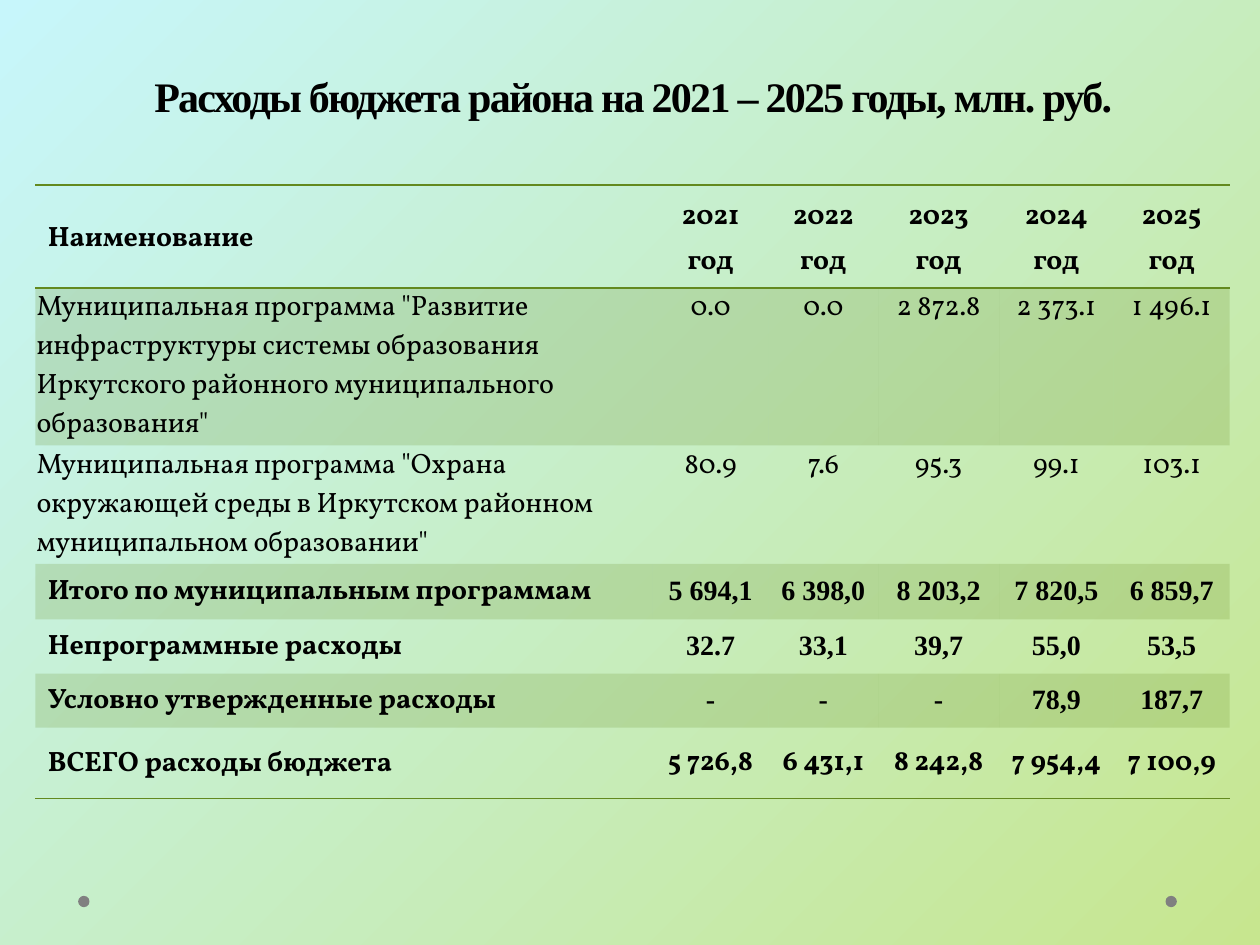
from dataclasses import dataclass
from lxml.etree import SubElement
from pptx import Presentation
from pptx.dml.color import RGBColor
from pptx.enum.shapes import MSO_SHAPE
from pptx.enum.text import MSO_ANCHOR, PP_ALIGN
from pptx.oxml import parse_xml
from pptx.oxml.ns import nsdecls, qn
from pptx.util import Inches, Pt


@dataclass(frozen=True)
class Theme:
    gradient: tuple = ("C7F6FB", "C7E68F")
    accent: str = "63891F"
    text: str = "000000"
    dot: str = "808080"
    serif: str = "Times New Roman"
    body: str = "Vollkorn"
    title_size: int = 24
    table_size: int = 16


theme = Theme()


def add_text(paragraph, text, font_name, size, bold):
    run = paragraph.add_run()
    run.text = text
    run.font.name = font_name
    run.font.size = Pt(size)
    run.font.bold = bold
    run.font.color.rgb = RGBColor.from_string(theme.text)
    return run


def add_border(cell, side, position):
    cell._tc.get_or_add_tcPr().insert(position, parse_xml(
        f'<a:{side} {nsdecls("a")} w="12700"><a:solidFill>'
        f'<a:srgbClr val="{theme.accent}"/></a:solidFill></a:{side}>'))


presentation = Presentation()
presentation.slide_width = Inches(10)
presentation.slide_height = Inches(7.5)
slide = presentation.slides.add_slide(presentation.slide_layouts[5])

background = slide.background.fill
background.gradient()
background.gradient_angle = 315
for stop, color in zip(background.gradient_stops, theme.gradient):
    stop.color.rgb = RGBColor.from_string(color)

for left in (9.25, 0.62):
    dot = slide.shapes.add_shape(
        MSO_SHAPE.OVAL, Inches(left), Inches(7.11), Inches(0.09), Inches(0.09))
    dot.shadow.inherit = False
    dot.fill.solid()
    dot.fill.fore_color.rgb = RGBColor.from_string(theme.dot)
    dot.line.fill.background()

title = slide.shapes.title
title.left, title.top = Inches(0.28), Inches(0.49)
title.width, title.height = Inches(9.49), Inches(0.52)
title.text_frame.vertical_anchor = MSO_ANCHOR.BOTTOM
title_paragraph = title.text_frame.paragraphs[0]
title_paragraph.alignment = PP_ALIGN.CENTER
title_run = add_text(
    title_paragraph, "Расходы бюджета района на 2021 – 2025 годы, млн. руб.",
    theme.serif, theme.title_size, True)
title_run.font._element.set("spc", "-100")

rows = [
    ("Наименование", "2021 год", "2022 год", "2023 год", "2024 год", "2025 год"),
    ('Муниципальная программа "Развитие инфраструктуры системы образования '
     'Иркутского районного муниципального образования"',
     "0.0", "0.0", "2 872.8", "2 373.1", "1 496.1"),
    ('Муниципальная программа "Охрана окружающей среды в Иркутском районном '
     'муниципальном образовании"', "80.9", "7.6", "95.3", "99.1", "103.1"),
    ("Итого по муниципальным программам",
     "5 694,1", "6 398,0", "8 203,2", "7 820,5", "6 859,7"),
    ("Непрограммные расходы", "32.7", "33,1", "39,7", "55,0", "53,5"),
    ("Условно утвержденные расходы", "-", "-", "-", "78,9", "187,7"),
    ("ВСЕГО расходы бюджета",
     "5 726,8", "6 431,1", "8 242,8", "7 954,4", "7 100,9"),
]
column_widths = (4.9, 0.92, 0.87, 0.96, 0.91, 0.92)
row_heights = (0.72, 0.81, 0.81, 0.44, 0.43, 0.43, 0.56)
header_row, total_row = 0, len(rows) - 1
program_rows, summary_rows = (1, 2), (3, 4, 5)

table = slide.shapes.add_table(
    len(rows), len(column_widths), Inches(0.28), Inches(1.47),
    Inches(sum(column_widths)), Inches(sum(row_heights))).table
table.first_row = False
table.horz_banding = False
table._tbl.tblPr.find(qn("a:tableStyleId")).text = "{2D5ABB26-0587-4C30-8999-92F81FD0307C}"
for column, width in zip(table.columns, column_widths):
    column.width = Inches(width)
for row, height in zip(table.rows, row_heights):
    row.height = Inches(height)

for row_index, values in enumerate(rows):
    for column_index, value in enumerate(values):
        cell = table.cell(row_index, column_index)
        is_number = column_index > 0
        is_program = row_index in program_rows
        is_summary_number = is_number and row_index in summary_rows
        is_total_number = is_number and row_index == total_row

        cell.vertical_anchor = MSO_ANCHOR.TOP if is_program else MSO_ANCHOR.MIDDLE
        if is_program or is_total_number:
            cell.margin_left = cell.margin_right = cell.margin_top = Inches(0.01)
            cell.margin_bottom = 0
        elif is_summary_number:
            cell.margin_left = cell.margin_right = Inches(0.07)
            cell.margin_top = cell.margin_bottom = 0

        paragraph = cell.text_frame.paragraphs[0]
        paragraph.alignment = PP_ALIGN.CENTER if is_number else PP_ALIGN.LEFT
        if row_index == header_row:
            paragraph.line_spacing = 1.15
        elif not is_program and not is_total_number:
            paragraph.line_spacing = 0.95
        add_text(paragraph, value, theme.serif if is_summary_number else theme.body,
                 theme.table_size, not is_program)

        if row_index % 2:
            cell.fill.solid()
            cell.fill.fore_color.rgb = RGBColor.from_string(theme.accent)
            color = cell._tc.tcPr.find(f'{qn("a:solidFill")}/{qn("a:srgbClr")}')
            SubElement(color, qn("a:alpha"), val="20000")
        else:
            cell.fill.background()
        if row_index in (header_row, total_row):
            add_border(cell, "lnB", 0)
        if row_index == header_row:
            add_border(cell, "lnT", 0)

presentation.save("out.pptx")
